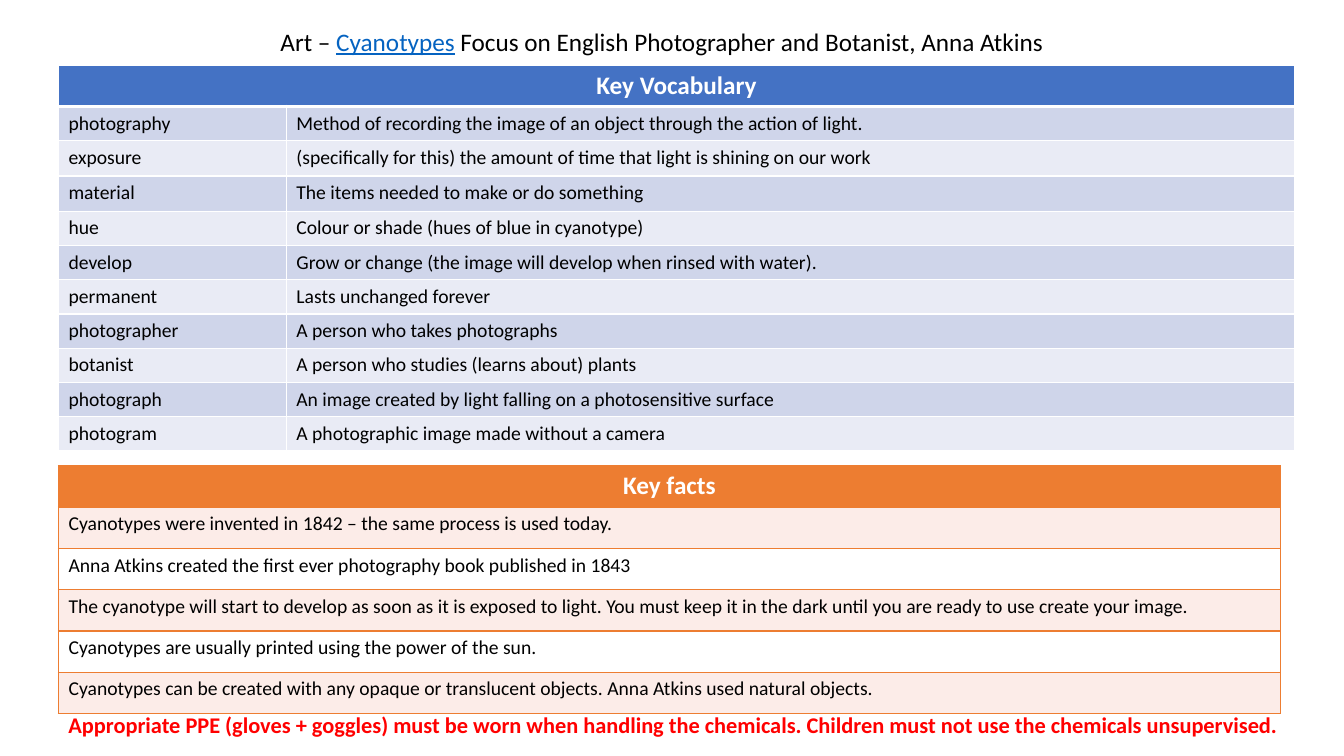
from pptx import Presentation
from pptx.dml.color import RGBColor
from pptx.enum.text import MSO_ANCHOR as Anchor, MSO_AUTO_SIZE as AutoSize, PP_ALIGN as Align
from pptx.oxml import parse_xml
from pptx.oxml.ns import nsdecls
from pptx.util import Inches, Pt

FONT = "Calibri"
BLACK = RGBColor(0x00, 0x00, 0x00)
WHITE = RGBColor(0xFF, 0xFF, 0xFF)
RED = RGBColor(0xFF, 0x00, 0x00)
LINK = RGBColor(0x05, 0x63, 0xC1)
BLUE = RGBColor(0x44, 0x72, 0xC4)
BLUE_BANDS = (RGBColor(0xCF, 0xD5, 0xEA), RGBColor(0xE9, 0xEB, 0xF5))
ORANGE = RGBColor(0xED, 0x7D, 0x31)
ORANGE_BANDS = (RGBColor(0xFC, 0xEC, 0xE8), WHITE)

VOCABULARY = [
    ("photography", "Method of recording the image of an object through the action of light."),
    ("exposure", "(specifically for this) the amount of time that light is shining on our work"),
    ("material", "The items needed to make or do something"),
    ("hue", "Colour or shade (hues of blue in cyanotype)"),
    ("develop", "Grow or change (the image will develop when rinsed with water)."),
    ("permanent", "Lasts unchanged forever"),
    ("photographer", "A person who takes photographs"),
    ("botanist", "A person who studies (learns about) plants"),
    ("photograph", "An image created by light falling on a photosensitive surface"),
    ("photogram", "A photographic image made without a camera"),
]
FACTS = [
    ("Cyanotypes were invented in 1842 – the same process is used today.",),
    ("Anna Atkins created the first ever photography book published in 1843",),
    ("The cyanotype will start to develop as soon as it is exposed to light. "
     "You must keep it in the dark until you are ready to use create your image.",),
    ("Cyanotypes are usually printed using the power of the sun.",),
    ("Cyanotypes can be created with any opaque or translucent objects. "
     "Anna Atkins used natural objects.",),
]
WARNING = ("Appropriate PPE (gloves + goggles) must be worn when handling the chemicals. "
           "Children must not use the chemicals unsupervised.")


def style(r, size, color, bold=False):
    r.font.name, r.font.size, r.font.bold = FONT, Pt(size), bold
    r.font.color.rgb = color


def place(s, left, top, width, height):
    s.left, s.top, s.width, s.height = map(Inches, (left, top, width, height))


def set_borders(cell, color, bottom):
    tcPr = cell._tc.get_or_add_tcPr()
    for i, side in enumerate("LRTB"):
        width = Pt(bottom if side == "B" else 1)
        tcPr.insert(i, parse_xml(
            f'<a:ln{side} {nsdecls("a")} w="{width}"><a:solidFill>'
            f'<a:srgbClr val="{color}"/></a:solidFill></a:ln{side}>'))


def fill_cell(cell, text, size, color, fill, bold=False):
    cell.text = text
    style(cell.text_frame.paragraphs[0].runs[0], size, color, bold)
    cell.fill.solid()
    cell.fill.fore_color.rgb = fill


def add_banded_table(slide, left, top, widths, heights, heading, rows,
                     head_fill, bands, border, head_line):
    frame = slide.shapes.add_table(len(heights), len(widths), Inches(left), Inches(top),
                                   Inches(sum(widths)), Inches(sum(heights)))
    table = frame.table
    for column, width in zip(table.columns, widths):
        column.width = Inches(width)
    for row, height in zip(table.rows, heights):
        row.height = Inches(height)

    # Heading across all columns
    head = table.cell(0, 0)
    if len(widths) > 1:
        head.merge(table.cell(0, len(widths) - 1))
    fill_cell(head, heading, 18, WHITE, head_fill, bold=True)
    head.text_frame.paragraphs[0].alignment = Align.CENTER

    # Banded rows
    for i, texts in enumerate(rows):
        for j, text in enumerate(texts):
            fill_cell(table.cell(i + 1, j), text, 14, BLACK, bands[i % 2])
    for i, row in enumerate(table.rows):
        for cell in row.cells:
            set_borders(cell, border, head_line if i == 0 else 1)


def add_title(slide):
    s = slide.shapes.title
    place(s, 1.35, 0.21, 10.43, 0.4)
    tf = s.text_frame
    tf.auto_size, tf.vertical_anchor = AutoSize.NONE, Anchor.TOP
    p = tf.paragraphs[0]
    p.alignment = Align.CENTER
    for text, color in (("Art – ", BLACK), ("Cyanotypes", LINK),
                        (" Focus on English Photographer and Botanist, Anna Atkins", BLACK)):
        r = p.add_run()
        r.text = text
        style(r, 18, color)
        r.font.underline = color == LINK


def add_warning(slide):
    s = slide.shapes.add_textbox(0, 0, 0, 0)
    place(s, 0.58, 7.01, 12.42, 0.37)
    tf = s.text_frame
    tf.word_wrap = True
    tf.text = WARNING
    style(tf.paragraphs[0].runs[0], 16, RED, bold=True)


def main():
    prs = Presentation()
    prs.slide_width, prs.slide_height = Inches(13.33), Inches(7.5)
    slide = prs.slides.add_slide(prs.slide_layouts[5])
    add_title(slide)
    add_banded_table(slide, 0.58, 0.65, (2.26, 10), [0.4, 0.34, 0.35, 0.35] + [0.34] * 7,
                     "Key Vocabulary", VOCABULARY, BLUE, BLUE_BANDS, WHITE, 3)
    add_banded_table(slide, 0.58, 4.62, (12.12,), [0.41] * 6,
                     "Key facts", FACTS, ORANGE, ORANGE_BANDS, ORANGE, 1)
    add_warning(slide)
    prs.save("out.pptx")


if __name__ == "__main__":
    main()
